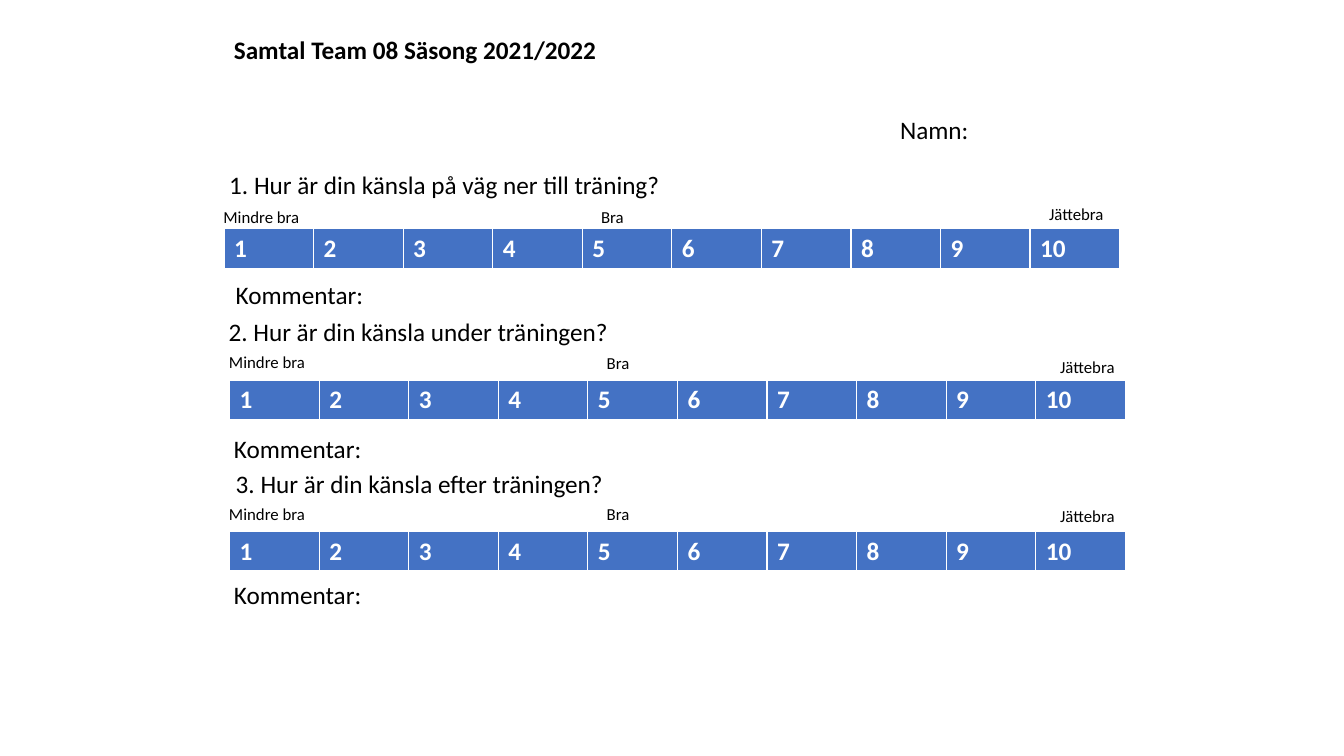
"""Build a training survey slide with three questions rated from 1 to 10."""
from dataclasses import dataclass

from lxml import etree
from pptx import Presentation
from pptx import util as u
from pptx.dml.color import RGBColor
from pptx.enum import text
from pptx.oxml import ns
from pptx.slide import Slide
from pptx.table import _Cell


@dataclass(frozen=True)
class Theme:
    font: str = "Calibri"
    ink: str = "000000"
    paper: str = "FFFFFF"
    scale: str = "4472C4"
    body: int = 18
    small: int = 12


@dataclass(frozen=True)
class Label:
    words: str
    left: float
    top: float
    width: float
    bold: bool = False
    small: bool = False


@dataclass(frozen=True)
class Question:
    heading: Label
    scale_left: float
    scale_top: float
    low_top: float
    middle_top: float
    high_left: float
    high_top: float
    comment_left: float
    comment_top: float


THEME = Theme()
STEPS = 10
STEP_WIDTH = 64
SCALE_HEIGHT = 29.2
BORDERS = {"a:lnL": 1, "a:lnR": 1, "a:lnT": 1, "a:lnB": 3}

HEADER = (
    Label("Samtal Team 08 Säsong 2021/2022", 160, 20.9, 274.3, bold=True),
    Label("Namn:", 635.8, 77.8, 64.1),
)
QUESTIONS = (
    Question(Label(" 1. Hur är din känsla på väg ner till träning?", 152.6, 117.4, 329.8),
             160, 163.4, 144, 144, 742.3, 141.8, 161.3, 195.8),
    Question(Label("2. Hur är din känsla under träningen?", 156.2, 222.5, 288.7),
             164, 271.4, 247.7, 248.4, 750.2, 251.3, 160, 306),
    Question(Label("3. Hur är din känsla efter träningen?", 161.3, 331.2, 280.1),
             164, 379.4, 356.4, 356.4, 750.2, 357.8, 160, 410.4),
)


def style_text(paragraph, size: int, color: str, bold: bool) -> None:
    """Set the font of a whole paragraph."""
    font = paragraph.font
    font.name = THEME.font
    font.size = u.Pt(size)
    font.bold = bold
    font.color.rgb = RGBColor.from_string(color)


def draw_label(slide: Slide, label: Label) -> None:
    """Place one line of text."""
    size = THEME.small if label.small else THEME.body
    height = 21.8 if label.small else 29.1
    box = slide.shapes.add_textbox(
        u.Pt(label.left), u.Pt(label.top), u.Pt(label.width), u.Pt(height))
    frame = box.text_frame
    frame.word_wrap = False
    frame.auto_size = text.MSO_AUTO_SIZE.SHAPE_TO_FIT_TEXT
    frame.text = label.words
    style_text(frame.paragraphs[0], size, THEME.ink, label.bold)


def set_borders(cell: _Cell) -> None:
    """Outline a cell in the paper colour."""
    properties = cell._tc.get_or_add_tcPr()
    for position, (tag, points) in enumerate(BORDERS.items()):
        line = etree.Element(ns.qn(tag), w=str(u.Pt(points)))
        fill = etree.SubElement(line, ns.qn("a:solidFill"))
        etree.SubElement(fill, ns.qn("a:srgbClr"), val=THEME.paper)
        properties.insert(position, line)


def draw_scale(slide: Slide, left: float, top: float) -> None:
    """Draw the numbered rating row."""
    table = slide.shapes.add_table(
        1, STEPS, u.Pt(left), u.Pt(top),
        u.Pt(STEPS * STEP_WIDTH), u.Pt(SCALE_HEIGHT)).table
    for number, cell in enumerate(table.iter_cells(), start=1):
        cell.text = str(number)
        style_text(cell.text_frame.paragraphs[0], THEME.body, THEME.paper, True)
        cell.fill.solid()
        cell.fill.fore_color.rgb = RGBColor.from_string(THEME.scale)
        set_borders(cell)


def draw_question(slide: Slide, question: Question) -> None:
    """Draw a question with its scale, scale captions and comment line."""
    left = question.scale_left
    draw_scale(slide, left, question.scale_top)
    labels = (
        question.heading,
        Label("Mindre bra", left - 7.5, question.low_top, 69.1, small=True),
        Label(" Bra", left + 259.6, question.middle_top, 33.8, small=True),
        Label("Jättebra", question.high_left, question.high_top, 54, small=True),
        Label("Kommentar:", question.comment_left, question.comment_top, 106.6),
    )
    for label in labels:
        draw_label(slide, label)


def main() -> None:
    """Build and save the slide."""
    deck = Presentation()
    deck.slide_width, deck.slide_height = u.Pt(960), u.Pt(540)
    slide = deck.slides.add_slide(deck.slide_layouts[6])
    for label in HEADER:
        draw_label(slide, label)
    for question in QUESTIONS:
        draw_question(slide, question)
    deck.save("out.pptx")


if __name__ == "__main__":
    main()
